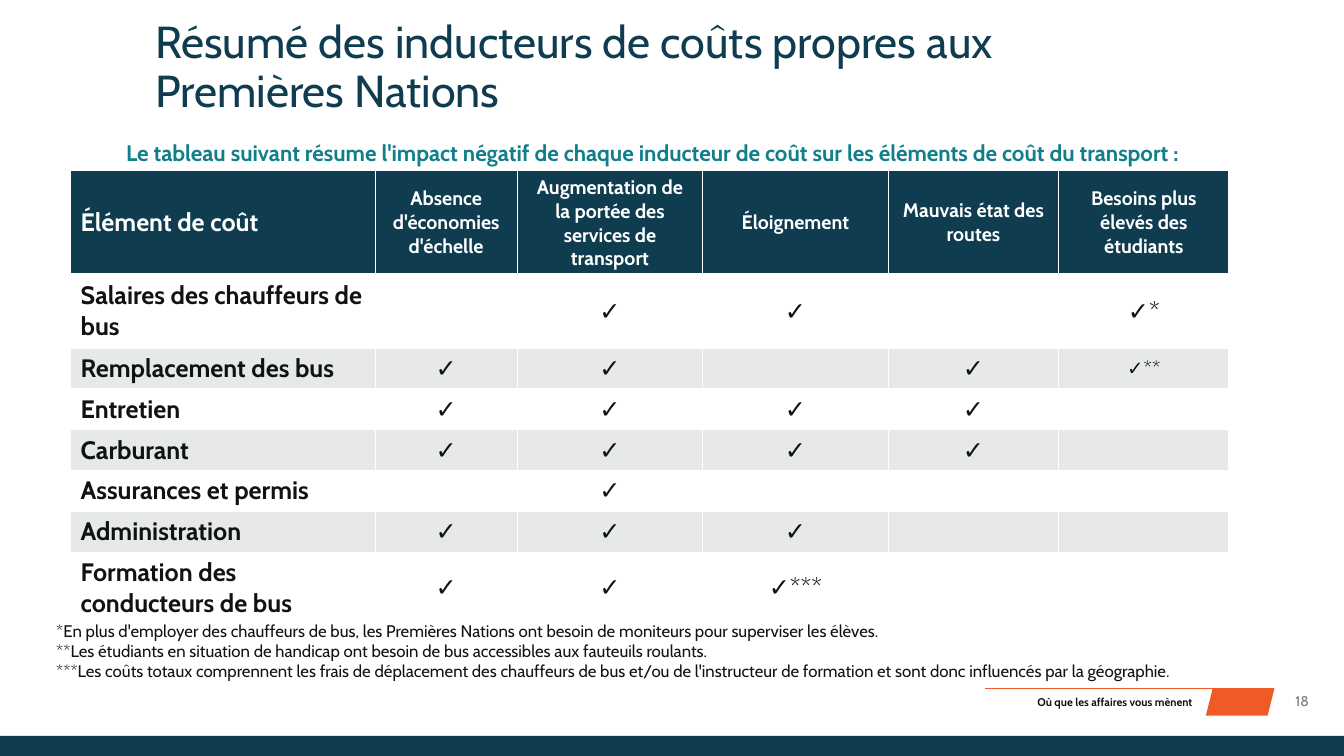
from lxml.etree import SubElement
from pptx import Presentation
from pptx.dml.color import RGBColor
from pptx.enum.shapes import MSO_CONNECTOR, MSO_SHAPE
from pptx.enum.text import MSO_ANCHOR, MSO_AUTO_SIZE, PP_ALIGN
from pptx.oxml.ns import qn
from pptx.util import Inches, Pt

COLORS = {
    "navy": "0F3C4F", "orange": "EF5A27", "teal": "107F8A", "ink": "0F1313",
    "gray": "797979", "band": "E7E8E9", "white": "FFFFFF",
}

presentation = Presentation()
presentation.slide_width = Inches(13.33)
presentation.slide_height = Inches(7.5)
slide = presentation.slides.add_slide(presentation.slide_layouts[1])
shapes = slide.shapes


def place(left, top, width, height):
    column = presentation.slide_width / 100
    row = presentation.slide_height / 100
    return [round(left * column), round(top * row), round(width * column), round(height * row)]


def write(paragraph, text, size, color, bold=False, alignment=PP_ALIGN.LEFT):
    paragraph.alignment = alignment
    run = paragraph.add_run()
    run.text = text
    run.font.name = "Cabin"
    run.font.size = Pt(size)
    run.font.bold = bold
    run.font.color.rgb = RGBColor.from_string(COLORS[color])


for kind, color, area in [
    (MSO_SHAPE.PARALLELOGRAM, "orange", (89.72, 91.07, 5.1, 3.6)),
    (MSO_SHAPE.RECTANGLE, "navy", (0, 97.33, 100, 2.67)),
]:
    shape = shapes.add_shape(kind, *place(*area))
    shape.shadow.inherit = False
    shape.fill.solid()
    shape.fill.fore_color.rgb = RGBColor.from_string(COLORS[color])
    shape.line.fill.background()

left, top, width, height = place(73.29, 91.07, 21.53, 0)
footer_line = shapes.add_connector(MSO_CONNECTOR.STRAIGHT, left, top, left + width, top)
footer_line.line.color.rgb = RGBColor.from_string(COLORS["orange"])
footer_line.line.width = Pt(1)
SubElement(footer_line._element.spPr, qn("a:effectLst"))

for text, size, color, bold, alignment, area in [
    ("Où que les affaires vous mènent", 8, "ink", True, PP_ALIGN.RIGHT, (73.29, 91.2, 15.45, 3.2)),
    ("18", 10, "gray", False, PP_ALIGN.CENTER, (94.82, 90.93, 4.13, 3.6)),
]:
    frame = shapes.add_textbox(*place(*area)).text_frame
    frame.word_wrap = True
    frame.margin_left = frame.margin_right = 0
    frame.vertical_anchor = MSO_ANCHOR.MIDDLE
    write(frame.paragraphs[0], text, size, color, bold, alignment)

title = shapes.title
subtitle = slide.placeholders[1]
for placeholder, area in [(title, (11.55, 2.67, 88, 12.93)), (subtitle, (9.38, 18, 89.57, 6.13))]:
    placeholder.left, placeholder.top, placeholder.width, placeholder.height = place(*area)
    frame = placeholder.text_frame
    frame.margin_left = frame.margin_right = frame.margin_top = frame.margin_bottom = 0
    frame.vertical_anchor = MSO_ANCHOR.TOP
    frame.auto_size = MSO_AUTO_SIZE.NONE
    frame.word_wrap = True

paragraph = title.text_frame.paragraphs[0]
paragraph.line_spacing = 0.9
write(paragraph, "Résumé des inducteurs de coûts propres aux", 32, "navy")
paragraph.add_line_break()
write(paragraph, "Premières Nations", 32, "navy")

paragraph = subtitle.text_frame.paragraphs[0]
properties = paragraph._p.get_or_add_pPr()
properties.set("marL", "0")
properties.set("indent", "0")
SubElement(properties, qn("a:buNone"))
paragraph.space_before = Pt(0)
paragraph.line_spacing = 1.1
write(
    paragraph,
    "Le tableau suivant résume l'impact négatif de chaque inducteur de coût sur les éléments de coût du transport :",
    16, "teal", True,
)

cost_rows = [
    ["Élément de coût", "Absence d'économies d'échelle",
     "Augmentation de la portée des services de transport", "Éloignement",
     "Mauvais état des routes", "Besoins plus élevés des étudiants"],
    ["Salaires des chauffeurs de bus", "", "✓", "✓", "", "✓*"],
    ["Remplacement des bus", "✓", "✓", "", "✓", "✓**"],
    ["Entretien", "✓", "✓", "✓", "✓", ""],
    ["Carburant", "✓", "✓", "✓", "✓", ""],
    ["Assurances et permis", "", "✓", "", "", ""],
    ["Administration", "✓", "✓", "✓", "", ""],
    ["Formation des conducteurs de bus", "✓", "✓", "✓***", "", ""],
]
column_shares = [22.66, 10.58, 13.8, 13.8, 12.68, 12.68]
row_shares = [13.7, 9.73] + [5.4] * 5 + [9.33]
table = shapes.add_table(
    len(row_shares), len(column_shares),
    *place(5.25, 22.53, sum(column_shares), sum(row_shares)),
).table
for column, share in zip(table.columns, column_shares):
    column.width = place(0, 0, share, 0)[2]
for row, share in zip(table.rows, row_shares):
    row.height = place(0, 0, 0, share)[3]

for row_index, labels in enumerate(cost_rows):
    is_header = row_index == 0
    fill = "navy" if is_header else "white" if row_index % 2 else "band"
    for column_index, label in enumerate(labels):
        cell = table.cell(row_index, column_index)
        cell.vertical_anchor = MSO_ANCHOR.MIDDLE
        cell_properties = cell._tc.get_or_add_tcPr()
        for side in ("lnL", "lnR", "lnT", "lnB"):
            thick = (is_header and side == "lnB") or (row_index == 1 and side == "lnT")
            border = SubElement(cell_properties, qn("a:" + side), w=str(Pt(3 if thick else 1)))
            border_fill = SubElement(border, qn("a:solidFill"))
            SubElement(border_fill, qn("a:srgbClr"), val=COLORS["white"])
        cell.fill.solid()
        cell.fill.fore_color.rgb = RGBColor.from_string(COLORS[fill])
        is_label = column_index == 0
        size = 14 if label == "✓**" or (is_header and not is_label) else 18
        paragraph = cell.text_frame.paragraphs[0]
        if label:
            write(
                paragraph, label, size, "white" if is_header else "ink",
                is_header or is_label, PP_ALIGN.LEFT if is_label else PP_ALIGN.CENTER,
            )
        else:
            paragraph.font.size = Pt(size)

notes = [
    "*En plus d'employer des chauffeurs de bus, les Premières Nations ont besoin de moniteurs pour superviser les élèves.",
    "**Les étudiants en situation de handicap ont besoin de bus accessibles aux fauteuils roulants.",
    "***Les coûts totaux comprennent les frais de déplacement des chauffeurs de bus et/ou de l'instructeur de formation et sont donc influencés par la géographie.",
]
frame = shapes.add_textbox(*place(3.45, 81.4, 86.95, 9.47)).text_frame
frame.word_wrap = True
for index, note in enumerate(notes):
    paragraph = frame.add_paragraph() if index else frame.paragraphs[0]
    write(paragraph, note, 12, "ink")

presentation.save("out.pptx")
